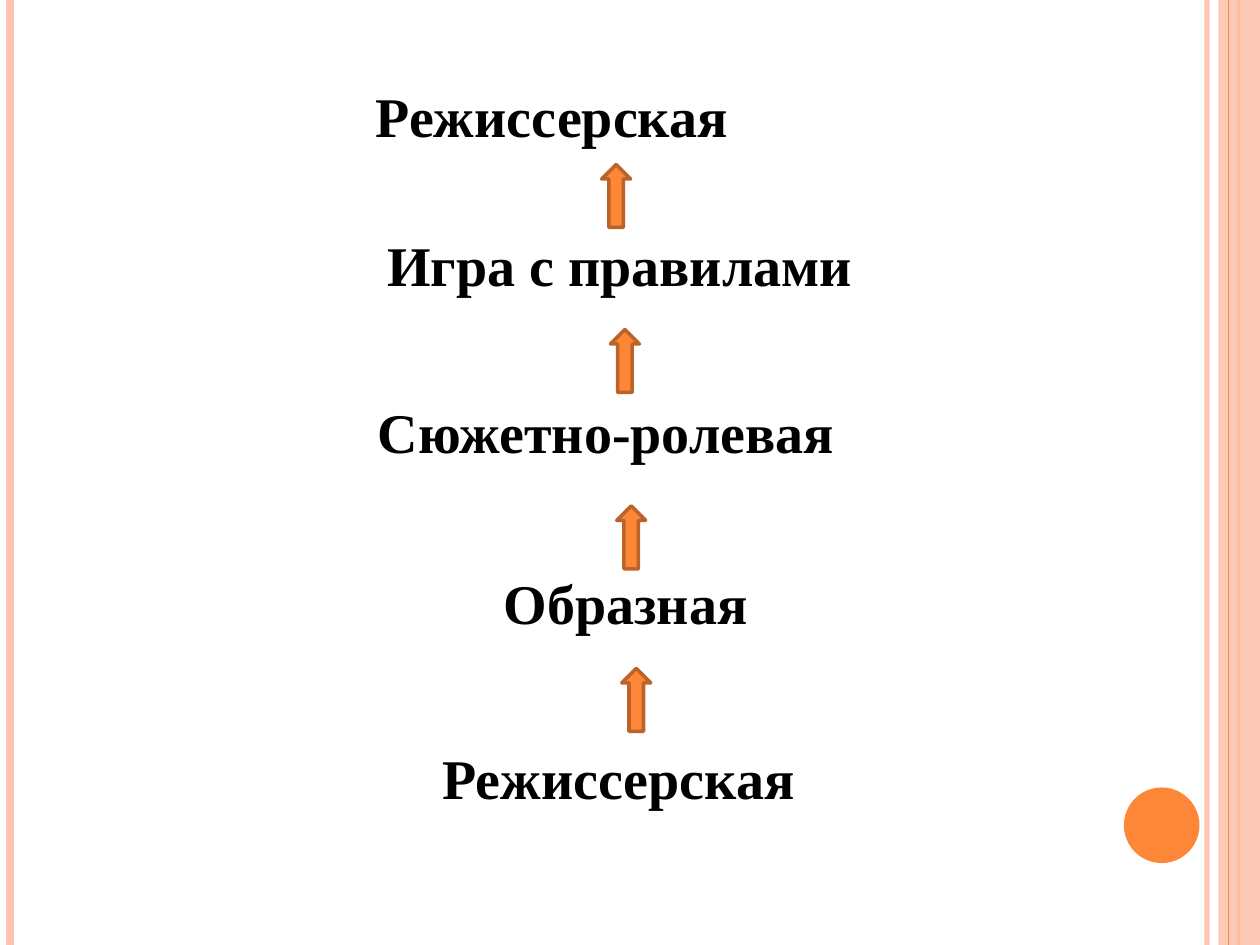
from lxml import etree
from pptx import Presentation
from pptx.dml.color import RGBColor
from pptx.enum.shapes import MSO_CONNECTOR, MSO_SHAPE
from pptx.enum.text import MSO_ANCHOR, PP_ALIGN
from pptx.oxml.ns import qn
from pptx.util import Inches, Pt

LINE = MSO_CONNECTOR.STRAIGHT
RECT, OVAL, ARROW = MSO_SHAPE.RECTANGLE, MSO_SHAPE.OVAL, MSO_SHAPE.RIGHT_ARROW
TOP, LEFT, CENTER = MSO_ANCHOR.TOP, PP_ALIGN.LEFT, PP_ALIGN.CENTER
HEX = {"peach": "FEC3AE", "orange": "FE8637", "rust": "BC6329", "ink": "000000"}
WIDE, HIGH = 10, 7.5


def paint(fill, name, alpha=100):
    """Fill with a named colour; alpha is the opacity in percent."""
    fill.solid()
    fill.fore_color.rgb = RGBColor.from_string(HEX[name])
    if alpha < 100:
        for clr in fill._xPr.iter(qn("a:srgbClr")):
            etree.SubElement(clr, qn("a:alpha"), val=str(alpha * 1000))


def add_rail(slide, x, name, width, alpha=100):
    rail = slide.shapes.add_connector(LINE, Inches(x), 0, Inches(x), Inches(HIGH))
    rail.line.width = Pt(width)
    paint(rail.line.fill, name, alpha)
    etree.SubElement(rail._element.spPr, qn("a:effectLst"))


def add_form(slide, kind, box, name, alpha=100):
    form = slide.shapes.add_shape(kind, *map(Inches, box))
    form.shadow.inherit = False
    paint(form.fill, name, alpha)
    form.line.fill.background()
    return form


def add_arrow(slide, x, y):
    """Upward arrow whose box before turning starts at x, y."""
    arrow = add_form(slide, ARROW, (x, y, 0.5, 0.23), "orange")
    arrow.rotation = 270
    arrow.line.width = Pt(2)
    paint(arrow.line.fill, "rust")


def write(frame, text, align):
    frame.word_wrap = True
    frame.vertical_anchor = TOP
    para = frame.paragraphs[0]
    para.text = text
    para.alignment = align
    para.space_before = Pt(0)
    font = para.font
    font.name, font.size, font.bold = "Times New Roman", Pt(32), True
    font.color.rgb = RGBColor.from_string(HEX["ink"])
    return para


def fill_body(slide, text, indent):
    body = slide.placeholders[1]
    body.left, body.top, body.width, body.height = map(Inches, (0.59, 0.6, 9, 6.06))
    props = write(body.text_frame, text, LEFT)._p.get_or_add_pPr()
    props.set("marL", str(Inches(indent)))
    props.set("indent", "0")
    etree.SubElement(props, qn("a:buNone"))


def add_stage(slide, text, x, y, width):
    box = slide.shapes.add_textbox(*map(Inches, (x, y, width, 0.64)))
    write(box.text_frame, text, CENTER)


def add_frame(slide):
    """Stripes along both sides and the round badge."""
    add_rail(slide, 9.58, "peach", 3, 93)
    add_rail(slide, 0.08, "peach", 4.5)
    add_rail(slide, 9.83, "orange", 1.5)
    add_form(slide, RECT, (9.67, 0, WIDE - 9.67, HIGH), "peach", 87)
    add_rail(slide, 9.75, "orange", 0.75)
    add_form(slide, OVAL, (8.92, 6.25, 0.6, 0.6), "orange")


def main():
    deck = Presentation()
    deck.slide_width, deck.slide_height = Inches(WIDE), Inches(HIGH)
    slide = deck.slides.add_slide(deck.slide_layouts[1])
    title = slide.shapes.title._element
    title.getparent().remove(title)

    add_frame(slide)
    fill_body(slide, "Режиссерская", 2.29)
    for stage in (
        ("Игра с правилами", 2.95, 1.78, 3.94),
        ("Сюжетно-ролевая", 2.41, 3.11, 4.8),
        ("Образная", 2.09, 4.46, 5.75),
        ("Режиссерская ", 2.09, 5.85, 5.75),
    ):
        add_stage(slide, *stage)
    for x, y in ((4.8, 5.44), (4.76, 4.15), (4.71, 2.75), (4.64, 1.44)):
        add_arrow(slide, x, y)
    deck.save("out.pptx")


if __name__ == "__main__":
    main()
